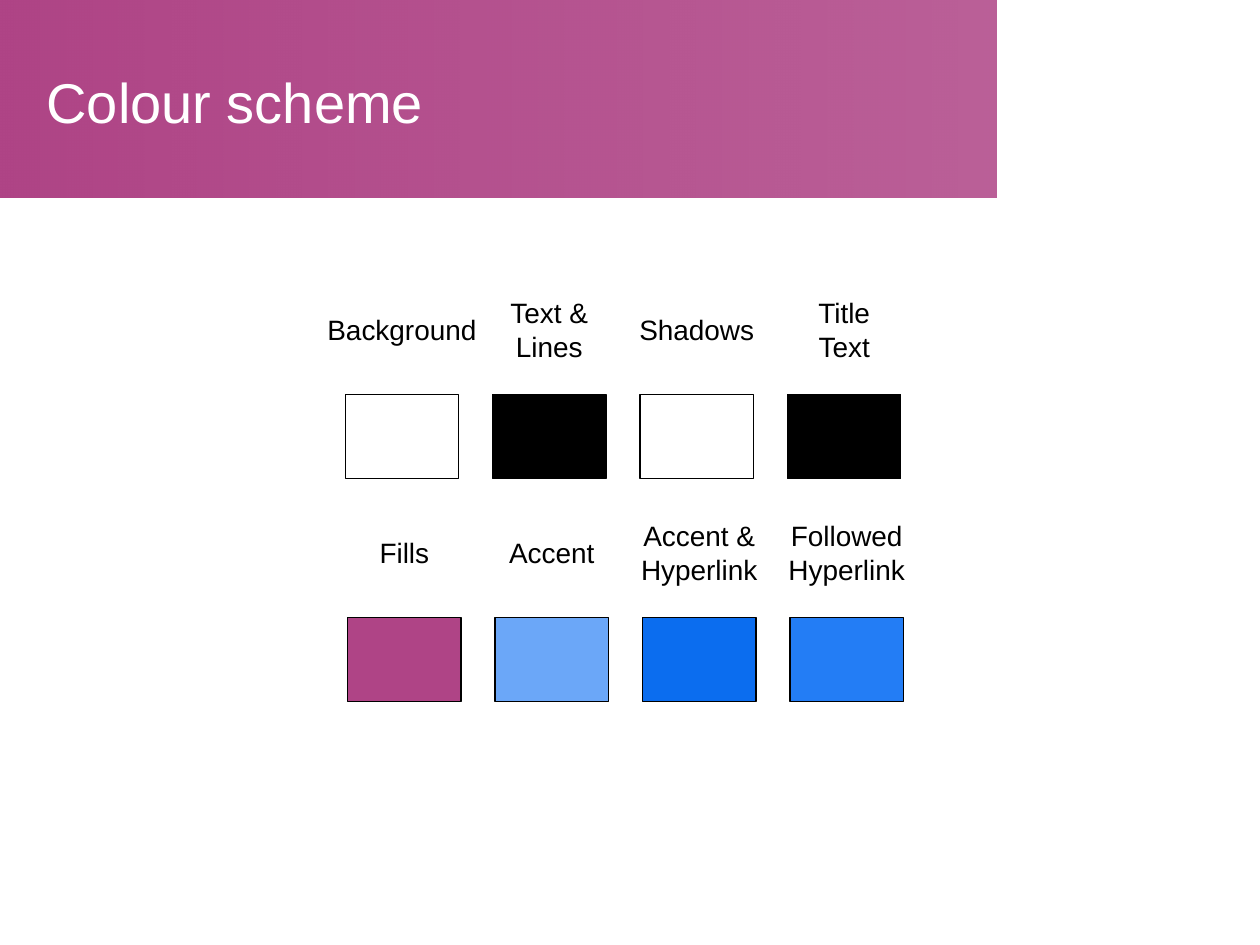
from lxml.etree import SubElement
from pptx import Presentation
from pptx.dml.color import RGBColor
from pptx.enum.shapes import MSO_SHAPE
from pptx.enum.text import MSO_ANCHOR, MSO_AUTO_SIZE, PP_ALIGN
from pptx.oxml.ns import qn
from pptx.util import Inches, Pt

FONT = "Arial"
PITCH = 1.17
SWATCH_WIDTH, SWATCH_HEIGHT = 0.9, 0.67
LABEL_RISE = 0.51

TOP_ROW = [
    (["Background"], 1.4, "FFFFFF"),
    (["Text &", "Lines"], 0.86, "000000"),
    (["Shadows"], 1.13, "FFFFFF"),
    (["Title\vText"], 0.65, "000000"),
]
BOTTOM_ROW = [
    (["Fills"], 0.63, "AF4486"),
    (["Accent"], 0.9, "6BA7F8"),
    (["Accent &", "Hyperlink"], 1.16, "0B6DEF"),
    (["Followed", "Hyperlink"], 1.16, "237DF5"),
]


def rgb(value):
    """Return the colour for a hex string."""
    return RGBColor.from_string(value)


def add_run(paragraph, text, size, color):
    """Add one styled run to a paragraph."""
    run = paragraph.add_run()
    run.text = text
    run.font.name = FONT
    run.font.size = Pt(size)
    run.font.color.rgb = rgb(color)


def add_rectangle(slide, left, top, width, height):
    """Add a rectangle without a shadow."""
    shape = slide.shapes.add_shape(
        MSO_SHAPE.RECTANGLE, Inches(left), Inches(top), Inches(width), Inches(height)
    )
    shape.shadow.inherit = False
    return shape


def add_banner(slide, left, top, width, height, title):
    """Add the fading title band and its heading."""
    band = add_rectangle(slide, left, top, width, height)
    band.line.fill.background()
    band.fill.gradient()
    band.fill.gradient_angle = 0
    for stop in band.fill.gradient_stops:
        stop.color.rgb = rgb("AF4486")
    end_color = list(band.element.iter(qn("a:srgbClr")))[-1]
    SubElement(end_color, qn("a:alpha"), val="85000")

    heading = slide.shapes.add_textbox(
        Inches(left + 0.27), Inches(top + 0.3), Inches(width - 0.43), Inches(1.01)
    )
    frame = heading.text_frame
    frame.word_wrap = True
    frame.vertical_anchor = MSO_ANCHOR.MIDDLE
    add_run(frame.paragraphs[0], title, 32, "FFFFFF")


def add_label(slide, center_x, center_y, width, lines):
    """Add a centred label around a point."""
    line_count = sum(line.count("\v") + 1 for line in lines)
    height = 0.1 + 0.27 * line_count
    label = slide.shapes.add_textbox(
        Inches(center_x - width / 2), Inches(center_y - height / 2), Inches(width), Inches(height)
    )
    frame = label.text_frame
    frame.word_wrap = False
    frame.auto_size = MSO_AUTO_SIZE.SHAPE_TO_FIT_TEXT
    for index, line in enumerate(lines):
        paragraph = frame.add_paragraph() if index else frame.paragraphs[0]
        paragraph.alignment = PP_ALIGN.CENTER
        for part_index, part in enumerate(line.split("\v")):
            if part_index:
                paragraph.add_line_break()
            add_run(paragraph, part, 16, "000000")


def add_swatch_row(slide, left, top, entries):
    """Add evenly spaced swatches with labels above them."""
    for column, (lines, label_width, color) in enumerate(entries):
        x = left + column * PITCH
        swatch = add_rectangle(slide, x, top, SWATCH_WIDTH, SWATCH_HEIGHT)
        swatch.fill.solid()
        swatch.fill.fore_color.rgb = rgb(color)
        swatch.line.color.rgb = rgb("000000")
        swatch.line.width = Pt(0.75)
        add_label(slide, x + SWATCH_WIDTH / 2, top - LABEL_RISE, label_width, lines)


def main():
    """Build and save the colour scheme slide."""
    presentation = Presentation()
    presentation.slide_width = Inches(10)
    presentation.slide_height = Inches(7.5)
    slide = presentation.slides.add_slide(presentation.slide_layouts[6])
    add_banner(slide, 0, 0, 7.91, 1.57, "Colour scheme")
    add_swatch_row(slide, 2.74, 3.13, TOP_ROW)
    add_swatch_row(slide, 2.76, 4.9, BOTTOM_ROW)
    presentation.save("out.pptx")


if __name__ == "__main__":
    main()
